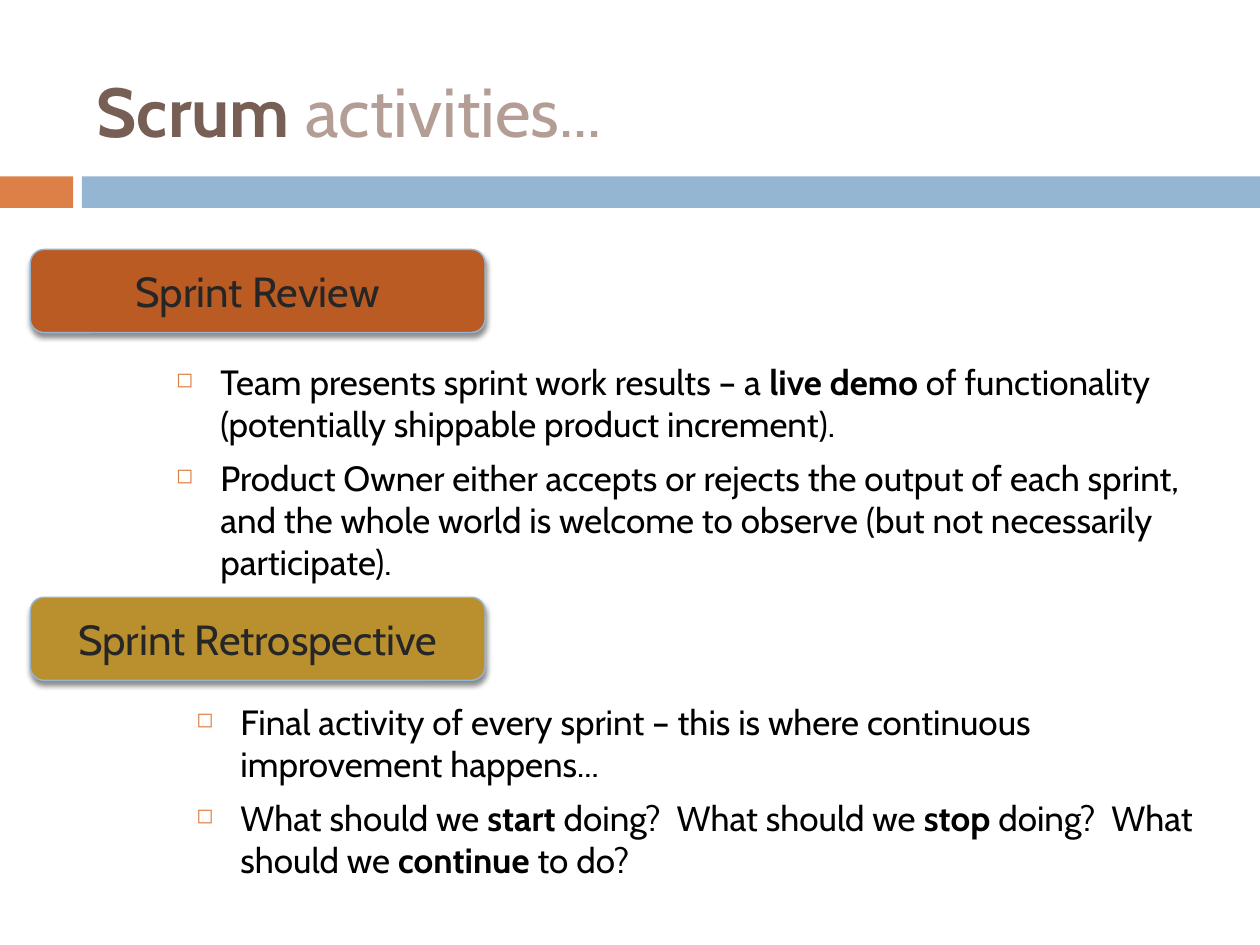
from dataclasses import dataclass

from lxml.etree import SubElement as Sub
from pptx import Presentation
from pptx.dml.color import RGBColor as RGB
from pptx.enum.shapes import MSO_SHAPE as Shape
from pptx.enum.text import MSO_ANCHOR as Anchor, PP_ALIGN as Align
from pptx.oxml.ns import qn
from pptx.util import Inches, Pt


@dataclass(frozen=True)
class Theme:
    font: str = "Cabin"
    orange: str = "DD8047"
    blue: str = "94B6D2"
    brown: str = "775F55"
    tan: str = "B39D94"
    rust: str = "B95B22"
    gold: str = "BA8F2D"
    dark: str = "262626"
    black: str = "000000"
    title: float = 39.6
    label: float = 24
    body: float = 20


THEME = Theme()


def style(font, size, color=None):
    font.name, font.size = THEME.font, Pt(size)
    if color:
        font.color.rgb = RGB.from_string(color)


def add_box(slide, kind, box, fill):
    shape = slide.shapes.add_shape(kind, *map(Inches, box))
    shape.shadow.inherit = False
    shape.fill.solid()
    shape.fill.fore_color.rgb = RGB.from_string(fill)
    shape.line.fill.background()
    return shape


def add_text(slide, box):
    frame = slide.shapes.add_textbox(*map(Inches, box)).text_frame
    frame.word_wrap = True
    return frame


def add_shadow(shape):
    effects = shape._element.spPr.find(qn("a:effectLst"))
    outer = Sub(effects, qn("a:outerShdw"), blurRad=str(Pt(3)),
                dist=str(Pt(2.4)), dir="5400000", rotWithShape="0")
    color = Sub(outer, qn("a:srgbClr"), val=THEME.black)
    Sub(color, qn("a:alpha"), val="45000")


def add_bullet(para):
    props = para._p.get_or_add_pPr()
    props.set("marL", str(Inches(0.35)))
    props.set("indent", str(-Inches(0.35)))
    Sub(Sub(props, qn("a:buClr")), qn("a:srgbClr"), val=THEME.orange)
    Sub(props, qn("a:buSzPct"), val="60000")
    Sub(props, qn("a:buChar"), char="◻")


def add_bands(slide, left, top, width, height):
    """Short orange band, gap, long blue band."""
    short, start = 0.58, 0.65
    add_box(slide, Shape.RECTANGLE, (left, top, short, height), THEME.orange)
    add_box(slide, Shape.RECTANGLE,
            (left + start, top, width - start, height), THEME.blue)


def add_title(slide, box, strong, light):
    frame = add_text(slide, box)
    frame.vertical_anchor = Anchor.MIDDLE
    para = frame.paragraphs[0]
    para.line_spacing = 1.3
    style(para.font, THEME.title)
    for text, color, bold in ((strong, THEME.brown, True),
                              (light, THEME.tan, False)):
        run = para.add_run()
        run.text = text
        style(run.font, THEME.title, color)
        run.font.bold = bold


def add_label(slide, box, text, fill):
    shape = add_box(slide, Shape.ROUNDED_RECTANGLE, box, fill)
    shape.line.color.rgb = RGB.from_string(THEME.blue)
    shape.line.width = Pt(0.79)
    add_shadow(shape)
    frame = shape.text_frame
    frame.vertical_anchor = Anchor.MIDDLE
    para = frame.paragraphs[0]
    para.text, para.alignment = text, Align.CENTER
    style(para.font, THEME.label, THEME.dark)


def add_list(slide, box, items):
    """Bulleted items; every second piece of an item is bold."""
    frame = add_text(slide, box)
    for row, item in enumerate(items):
        para = frame.add_paragraph() if row else frame.paragraphs[0]
        para.space_before = Pt(7)
        style(para.font, THEME.body, THEME.black)
        add_bullet(para)
        for part, text in enumerate(item):
            run = para.add_run()
            run.text = text
            style(run.font, THEME.body, THEME.black)
            run.font.bold = part % 2 == 1


def add_section(slide, top, label, fill, box, items):
    """Label at the left margin, with its list in a box relative to it."""
    left = 0.24
    add_label(slide, (left, top, 3.61, 0.66), label, fill)
    dx, dy, width, height = box
    add_list(slide, (left + dx, top + dy, width, height), items)


REVIEW = [
    ("Team presents sprint work results – a ", "live demo",
     " of functionality (potentially shippable product increment)."),
    ("Product Owner either accepts or rejects the output of each sprint, "
     "and the whole world is welcome to observe "
     "(but not necessarily participate).",),
]
RETRO = [
    ("Final activity of every sprint – this is where continuous "
     "improvement happens...",),
    ("What should we ", "start", " doing?  What should we ", "stop",
     " doing?  What should we ", "continue", " to do?"),
]


def main():
    deck = Presentation()
    deck.slide_width, deck.slide_height = Inches(10), Inches(7.5)
    slide = deck.slides.add_slide(deck.slide_layouts[6])

    # Header
    add_bands(slide, 0, 1.4, 10, 0.25)
    add_title(slide, (0.67, 0.3, 8.83, 0.95), "Scrum ", "activities...")

    # Activities
    add_section(slide, 1.98, "Sprint Review", THEME.rust,
                (1.06, 0.83, 8.2, 1.74), REVIEW)
    add_section(slide, 4.74, "Sprint Retrospective", THEME.gold,
                (1.22, 0.77, 8.2, 1.95), RETRO)
    deck.save("out.pptx")


if __name__ == "__main__":
    main()
